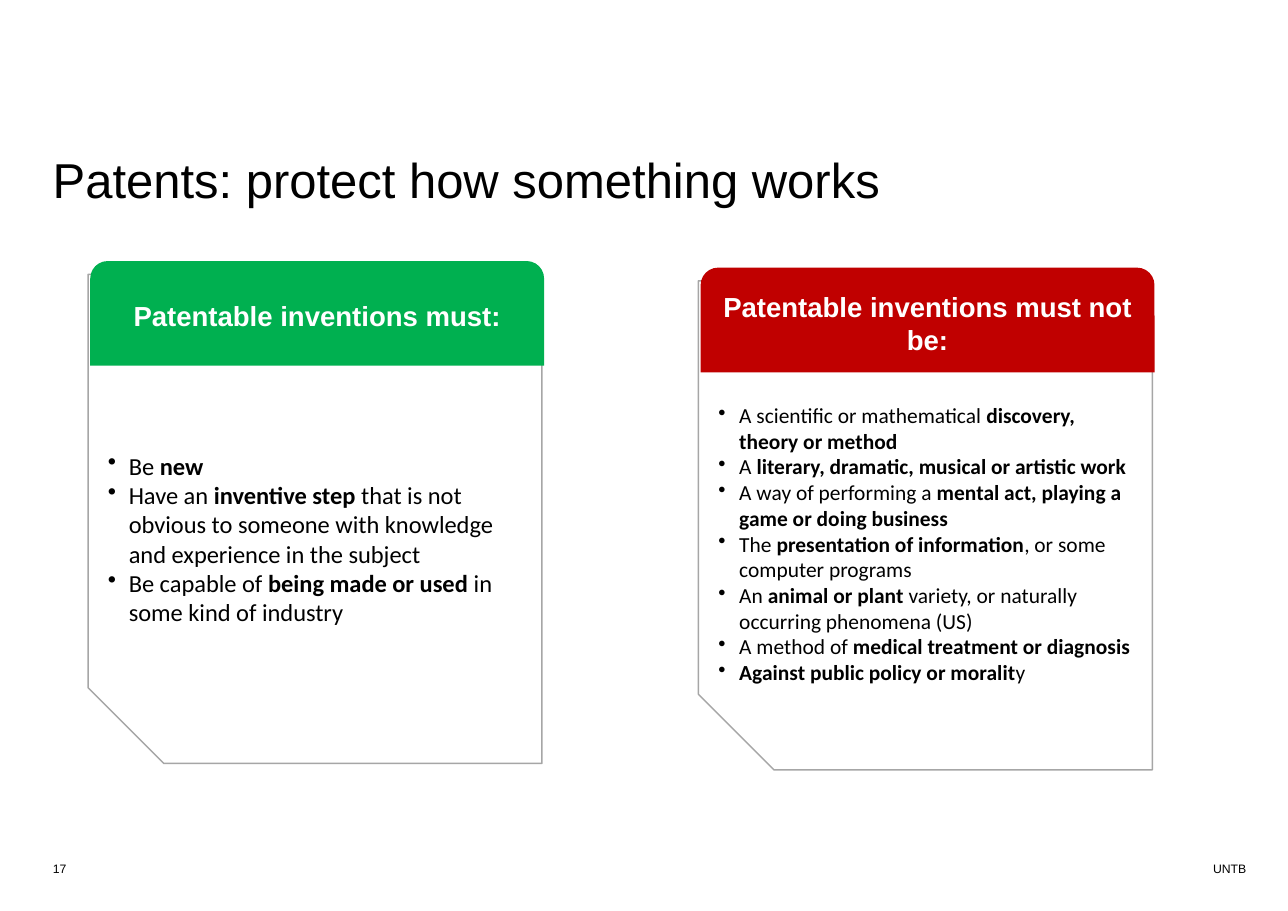
import pptx
import pptx.util
import pptx.dml.color
import pptx.enum.shapes
import pptx.enum.text
import pptx.oxml.ns
import lxml.etree

Pt = pptx.util.Pt
Shape = pptx.enum.shapes.MSO_SHAPE
Anchor = pptx.enum.text.MSO_ANCHOR
Align = pptx.enum.text.PP_ALIGN
hues = {"ink": "000000", "edge": "A6A6A6", "must": "00B050", "not": "C00000", "white": "FFFFFF"}
tint = {name: pptx.dml.color.RGBColor.from_string(code) for name, code in hues.items()}

deck = pptx.Presentation()
deck.slide_width = pptx.util.Inches(11.69)
deck.slide_height = pptx.util.Inches(8.27)
slide = deck.slides.add_slide(deck.slide_layouts[6])


def place(x, y, w, h):
    wide, high = deck.slide_width / 100, deck.slide_height / 100
    return int(x * wide), int(y * high), int(w * wide), int(h * high)


def write(x, y, w, h, lines, size, face="Arial", anchor=Anchor.TOP, space=1.0, dots=False):
    frame = slide.shapes.add_textbox(*place(x, y, w, h)).text_frame
    frame.word_wrap = True
    frame.vertical_anchor = anchor
    frame.margin_left = frame.margin_right = frame.margin_top = frame.margin_bottom = 0
    for i, line in enumerate(lines):
        para = frame.add_paragraph() if i else frame.paragraphs[0]
        para.line_spacing = space
        if dots:
            props = para._p.get_or_add_pPr()
            dent = pptx.util.Inches(0.19)
            props.set("marL", str(dent))
            props.set("indent", str(-dent))
            mark = lxml.etree.SubElement(props, pptx.oxml.ns.qn("a:buChar"))
            mark.set("char", "•")
        para.font.size = Pt(size)
        para.font.name = face
        para.font.color.rgb = tint["ink"]
        for j, part in enumerate(line.split("*")):
            if part:
                run = para.add_run()
                run.text = part
                if j % 2:
                    run.font.bold = True


write(4.1, 17.17, 88.97, 11.49, ["Patents: protect how something works"], 32, space=0.9)
write(4.1, 93.95, 11.55, 2.78, ["17"], 8, anchor=Anchor.MIDDLE)
write(94.18, 93.95, 4.36, 2.78, ["UNTB"], 8, anchor=Anchor.MIDDLE)

cards = [
    (6.84, 30.11, "must", "Patentable inventions must:", 49.46, 22.37, 16, [
        "Be *new*",
        "Have an *inventive step *that is not obvious to someone with knowledge and experience in the subject",
        "Be capable of *being made or used *in some kind of industry",
    ]),
    (54.23, 30.83, "not", "Patentable inventions must not be:", 44.14, 31.32, 14, [
        "A scientific or mathematical *discovery, theory or method*",
        "A *literary, dramatic, musical or artistic work*",
        "A way of performing a *mental act, playing a game or doing business*",
        "The *presentation of information*, or some computer programs",
        "An *animal or plant *variety, or naturally occurring phenomena (US)",
        "A method of *medical treatment or diagnosis*",
        "*Against public policy or moralit*y",
    ]),
]

for x, y, hue, label, top, high, size, points in cards:
    group = slide.shapes.add_group_shape()
    body = group.shapes.add_shape(Shape.SNIP_2_DIAG_RECTANGLE, *place(x, y, 35.24, 53.69))
    body.shadow.inherit = False
    body.fill.background()
    body.line.color.rgb = tint["edge"]
    body.line.width = Pt(1)

    head = group.shapes.add_shape(Shape.ROUND_2_SAME_RECTANGLE, *place(x + 0.17, y - 1.45, 35.24, 11.49))
    head.shadow.inherit = False
    head.fill.solid()
    head.fill.fore_color.rgb = tint[hue]
    head.line.fill.background()
    head.text_frame.word_wrap = True
    head.text_frame.vertical_anchor = Anchor.MIDDLE
    para = head.text_frame.paragraphs[0]
    para.text = label
    para.alignment = Align.CENTER
    para.font.size = Pt(18)
    para.font.name = "Arial"
    para.font.bold = True
    para.font.color.rgb = tint["white"]

    write(x + 1.54, top, 32.25, high, points, size, "Calibri", dots=True)

deck.save("out.pptx")
